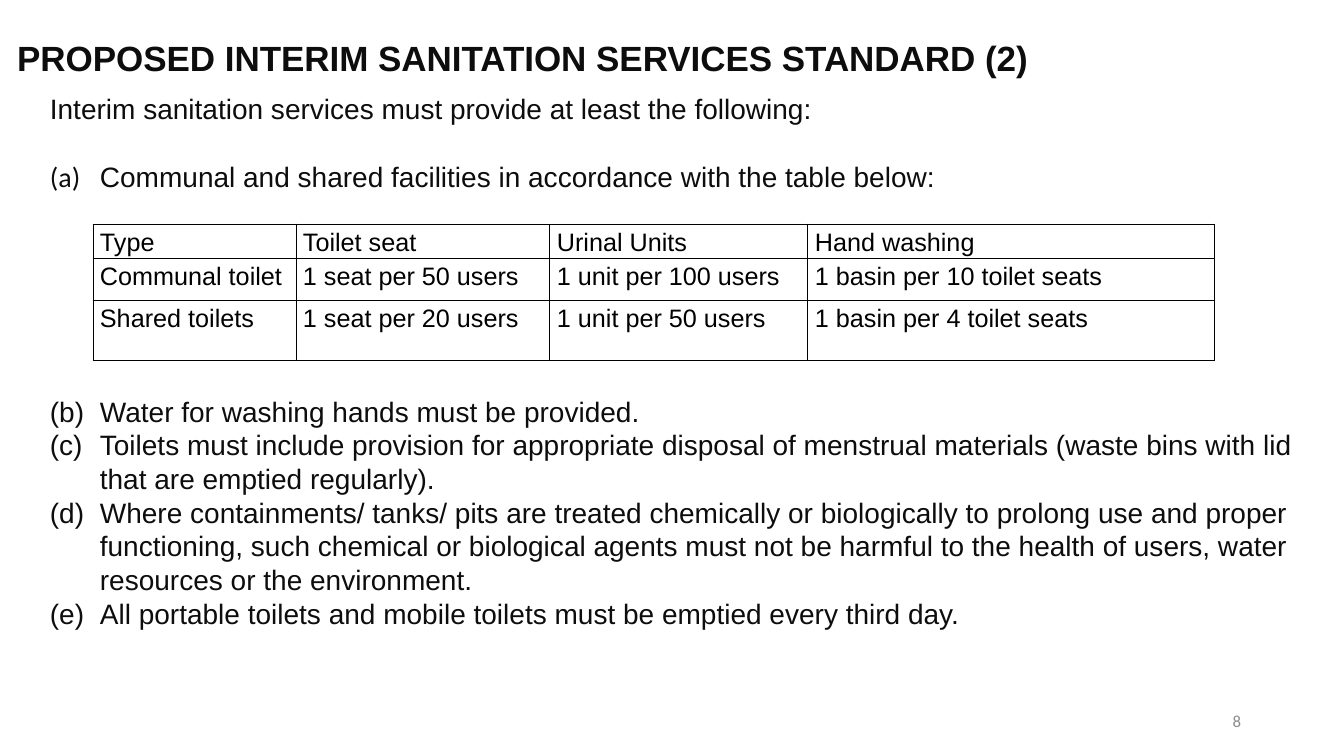
import lxml.etree
import pptx
import pptx.dml.color
import pptx.enum.text
import pptx.oxml.ns
import pptx.util

SCALE = 914400 / 100.8
INK, BLACK, GREY = "0D0D0D", "000000", "8C8C8C"
ALIGN = pptx.enum.text.PP_ALIGN
ANCHOR = pptx.enum.text.MSO_ANCHOR

TITLE = "PROPOSED INTERIM SANITATION SERVICES STANDARD (2)"
INTRO = "Interim sanitation services must provide at least the following:"
REQUIREMENTS = {
    "(a)": "Communal and shared facilities in accordance with the table below:",
    "(b)": "Water for washing hands must be provided.",
    "(c)": "Toilets must include provision for appropriate disposal of menstrual materials "
           "(waste bins with lid that are emptied regularly).",
    "(d)": "Where containments/ tanks/ pits are treated chemically or biologically to prolong "
           "use and proper functioning, such chemical or biological agents must not be harmful "
           "to the health of users, water resources or the environment.",
    "(e)": "All portable toilets and mobile toilets must be emptied every third day.",
}
FACILITIES = [
    ["Type", "Toilet seat", "Urinal Units", "Hand washing"],
    ["Communal toilet", "1 seat per 50 users", "1 unit per 100 users", "1 basin per 10 toilet seats"],
    ["Shared toilets", "1 seat per 20 users", "1 unit per 50 users", "1 basin per 4 toilet seats"],
]


def px(n):
    """Turn px into EMU."""
    return pptx.util.Emu(round(n * SCALE))


def rgb(color):
    """Turn a hex string into a colour."""
    return pptx.dml.color.RGBColor.from_string(color)


def add_xml(parent, tag, **attrs):
    """Append a DrawingML element to a parent and return it."""
    return lxml.etree.SubElement(parent, pptx.oxml.ns.qn(tag), attrs)


def write(p, text, size=20, font="Arial", color=INK, bold=False,
          align=ALIGN.LEFT, spacing=None, before=0):
    """Write formatted text into a paragraph."""
    p.alignment = align
    p.line_spacing = spacing
    if before:
        p.space_before = pptx.util.Pt(before)
    r = p.add_run()
    r.text = text
    r.font.size = pptx.util.Pt(size)
    r.font.name = font
    r.font.bold = bold
    r.font.color.rgb = rgb(color)


def hang(p, indent):
    """Give a paragraph a hanging indent with a tab stop at its edge."""
    pPr = p._p.get_or_add_pPr()
    pPr.set("marL", str(px(indent)))
    pPr.set("indent", str(-px(indent)))
    add_xml(add_xml(pPr, "a:tabLst"), "a:tab", pos=str(px(indent)), algn="l")


def add_title(s, x, y, w, h):
    """Place the heading in the title placeholder."""
    sp = s.shapes.title
    sp.left, sp.top, sp.width, sp.height = map(px, (x, y, w, h))
    tf = sp.text_frame
    tf.auto_size = pptx.enum.text.MSO_AUTO_SIZE.NONE
    tf.vertical_anchor = ANCHOR.MIDDLE
    write(tf.paragraphs[0], TITLE, size=25, bold=True)


def add_textbox(s, x, y, w, h):
    """Add a wrapping text box and return its text frame."""
    tf = s.shapes.add_textbox(*map(px, (x, y, w, h))).text_frame
    tf.word_wrap = True
    return tf


def add_requirements(s, x, y, w, h):
    """Add the intro and lettered requirements, leaving room for the table after (a)."""
    line = 24
    gaps = {"(a)": line, "(b)": 6 * line}
    fonts = {"(a)": "Calibri"}
    tf = add_textbox(s, x, y, w, h)
    write(tf.paragraphs[0], INTRO, spacing=pptx.util.Pt(line))
    for letter, text in REQUIREMENTS.items():
        p = tf.add_paragraph()
        hang(p, 50)
        style = {"spacing": pptx.util.Pt(line), "before": gaps.get(letter, 0)}
        write(p, letter, font=fonts.get(letter, "Arial"), **style)
        write(p, "\t" + text, **style)


def add_borders(cell):
    """Draw a thin black line on every side of a cell."""
    tcPr = cell._tc.get_or_add_tcPr()
    for side in ("a:lnL", "a:lnR", "a:lnT", "a:lnB"):
        ln = add_xml(tcPr, side, w=str(pptx.util.Pt(0.75)))
        add_xml(add_xml(ln, "a:solidFill"), "a:srgbClr", val=BLACK)


def add_facilities(s, x, y, widths, heights):
    """Add the table of communal and shared facilities."""
    box = map(px, (x, y, sum(widths), sum(heights)))
    table = s.shapes.add_table(len(heights), len(widths), *box).table
    table.first_row = table.horz_banding = False
    for column, width in zip(table.columns, widths):
        column.width = px(width)
    for row, height, texts in zip(table.rows, heights, FACILITIES):
        row.height = px(height)
        for cell, text in zip(row.cells, texts):
            cell.margin_left = cell.margin_right = px(7)
            cell.margin_top = cell.margin_bottom = 0
            add_borders(cell)
            cell.fill.background()
            write(cell.text_frame.paragraphs[0], text, size=18, color=BLACK,
                  align=ALIGN.JUSTIFY, spacing=1.15)


def add_page_number(s, x, y, w, h):
    """Add the page number at the lower right."""
    tf = add_textbox(s, x, y, w, h)
    tf.vertical_anchor = ANCHOR.MIDDLE
    write(tf.paragraphs[0], "8", size=12, font="Calibri", color=GREY, align=ALIGN.RIGHT)


def main():
    """Build and save the slide."""
    prs = pptx.Presentation()
    prs.slide_width, prs.slide_height = px(1344), px(756)
    s = prs.slides.add_slide(prs.slide_layouts.get_by_name("Title Only"))
    add_requirements(s, 40, 87, 1287, 614)
    add_page_number(s, 949, 701, 302, 40)
    add_title(s, 7, 32, 1303, 52)
    add_facilities(s, 93, 224, (203, 254, 258, 407), (34, 42, 60))
    prs.save("out.pptx")


if __name__ == "__main__":
    main()
